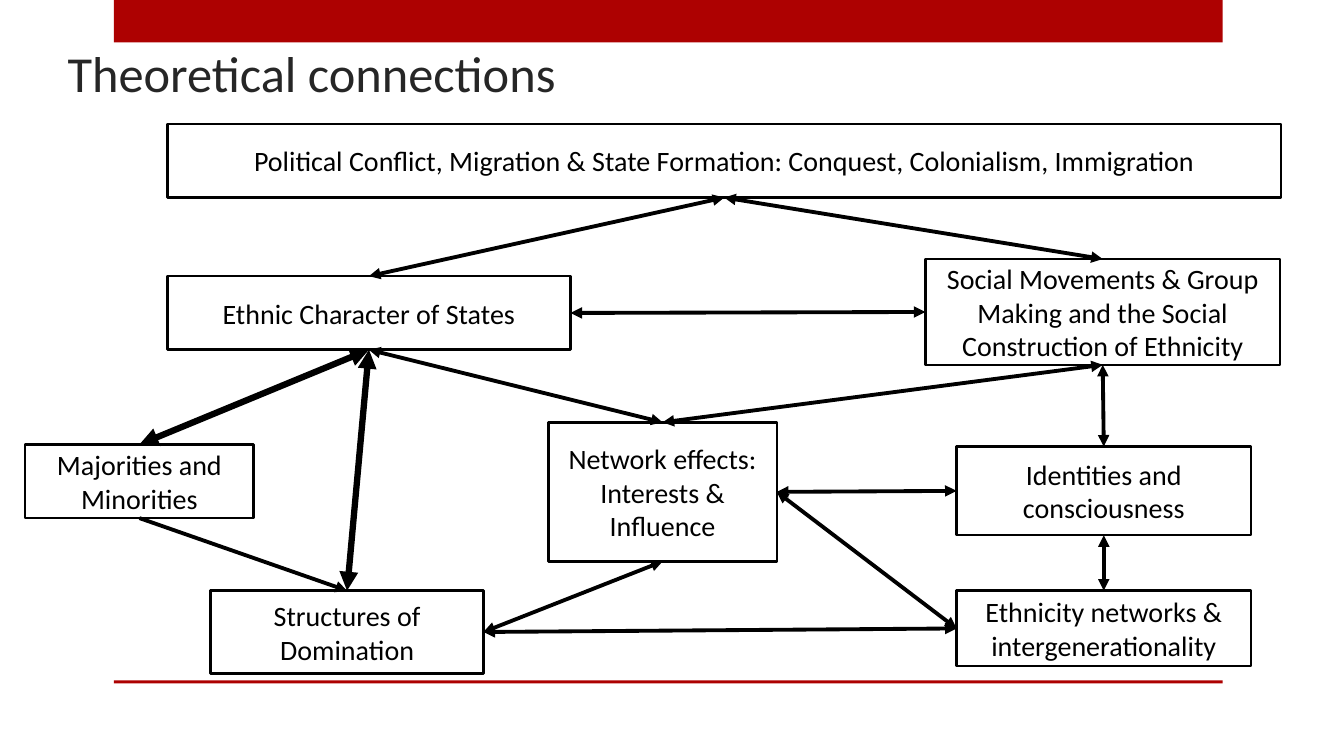
from lxml import etree
from pptx import Presentation
from pptx import util as u
from pptx.dml.color import RGBColor
from pptx.enum import shapes, text
from pptx.oxml.ns import qn

COLS, ROWS = 40, 30
INK = {"line": "000000", "title": "262626", "bar": "AD0101"}
SITES = {"top": 0, "left": 1, "bottom": 2, "right": 3}
THIN, THICK = 2.75, 4.5

# name: (left, top, width, height) in columns and rows, wording
BOXES = {
    "major": ((0.75, 17.64, 6.8, 2.92), "Majorities and Minorities"),
    "struct": ((6.27, 23.44, 8.12, 3.28), "Structures of Domination"),
    "conflict": ((4.98, 4.92, 33.15, 2.92),
                 "Political Conflict, Migration & State Formation: "
                 "Conquest, Colonialism, Immigration"),
    "states": ((4.98, 10.96, 12, 2.92), "Ethnic Character of States"),
    "net": ((16.32, 16.76, 6.8, 5.52), "Network effects: Interests & Influence"),
    "ethnic": ((28.47, 23.44, 8.76, 3), "Ethnicity networks & intergenerationality"),
    "social": ((27.54, 10.28, 10.56, 4.2),
               "Social Movements & Group Making and the Social "
               "Construction of Ethnicity"),
    "ident": ((28.47, 17.72, 8.76, 3.52), "Identities and consciousness"),
}

# from box, side, to box, side, line width, heads at (start, end)
BOTH, END = ("headEnd", "tailEnd"), ("tailEnd",)
LINKS = [
    ("conflict", "bottom", "social", "top", THIN, BOTH),
    ("net", "top", "states", "bottom", THIN, BOTH),
    ("states", "bottom", "major", "top", THICK, BOTH),
    ("major", "bottom", "struct", "top", THIN, END),
    ("conflict", "bottom", "states", "top", THIN, BOTH),
    ("social", "bottom", "ident", "top", THIN, BOTH),
    ("net", "right", "ethnic", "left", THIN, BOTH),
    ("states", "right", "social", "left", THIN, BOTH),
    ("states", "bottom", "struct", "top", THICK, BOTH),
    ("struct", "right", "net", "bottom", THIN, BOTH),
    ("net", "top", "social", "bottom", THIN, BOTH),
    ("net", "right", "ident", "left", THIN, BOTH),
    ("ident", "bottom", "ethnic", "top", THIN, BOTH),
    ("struct", "right", "ethnic", "left", THIN, BOTH),
]


def put(item, values):
    """Set each named attribute of an item."""
    for name, value in values.items():
        setattr(item, name, value)


class Board:
    def __init__(self, deck, font):
        self.font = font
        self.col = deck.slide_width / COLS
        self.row = deck.slide_height / ROWS
        self.slide = deck.slides.add_slide(deck.slide_layouts[5])

    def place(self, left, top, width, height):
        """Turn columns and rows into slide lengths."""
        return [round(n * unit) for n, unit in
                zip((left, top, width, height), (self.col, self.row) * 2)]

    def label(self, shape, words, size, ink, align, anchor):
        frame = shape.text_frame
        frame.text = words
        put(frame, {"word_wrap": True, "vertical_anchor": anchor,
                    "auto_size": text.MSO_AUTO_SIZE.NONE})
        para = frame.paragraphs[0]
        para.alignment = align
        font = para.runs[0].font
        put(font, {"name": self.font, "size": u.Pt(size)})
        font.color.rgb = RGBColor.from_string(INK[ink])

    def title(self, spot, words):
        shape = self.slide.shapes.title
        put(shape, dict(zip(("left", "top", "width", "height"), self.place(*spot))))
        self.label(shape, words, 36, "title", text.PP_ALIGN.LEFT,
                   text.MSO_ANCHOR.BOTTOM)

    def rect(self, spot):
        shape = self.slide.shapes.add_shape(
            shapes.MSO_SHAPE.RECTANGLE, *self.place(*spot))
        shape.shadow.inherit = False
        return shape

    def bar(self, spot):
        shape = self.rect(spot)
        shape.fill.solid()
        shape.fill.fore_color.rgb = RGBColor.from_string(INK["bar"])
        shape.line.fill.background()

    def box(self, spot, words):
        shape = self.rect(spot)
        shape.fill.background()
        self.stroke(shape, 1.75)
        self.label(shape, words, 20, "line", text.PP_ALIGN.CENTER,
                   text.MSO_ANCHOR.MIDDLE)
        return shape

    def stroke(self, shape, width):
        shape.line.width = u.Pt(width)
        shape.line.color.rgb = RGBColor.from_string(INK["line"])

    def link(self, start, side, end, other, width, heads):
        """Join the sides of two boxes with an arrow."""
        line = self.slide.shapes.add_connector(
            shapes.MSO_CONNECTOR.STRAIGHT, 0, 0, 0, 0)
        line.begin_connect(start, SITES[side])
        line.end_connect(end, SITES[other])
        self.stroke(line, width)
        props = line._element.spPr
        for head in heads:
            etree.SubElement(props.find(qn("a:ln")), qn("a:" + head), type="triangle")
        etree.SubElement(props, qn("a:effectLst"))


def main():
    deck = Presentation()
    put(deck, {"slide_width": u.Inches(13.33), "slide_height": u.Inches(7.5)})
    board = Board(deck, "Calibri")
    for top, height in ((0, 1.68), (27, 0.12)):
        board.bar((3.39, top, 33, height))
    board.title((1.71, 1.6, 35.52, 2.68), "Theoretical connections")
    boxes = {name: board.box(*item) for name, item in BOXES.items()}
    for start, side, end, other, width, heads in LINKS:
        board.link(boxes[start], side, boxes[end], other, width, heads)
    deck.save("out.pptx")


if __name__ == "__main__":
    main()
